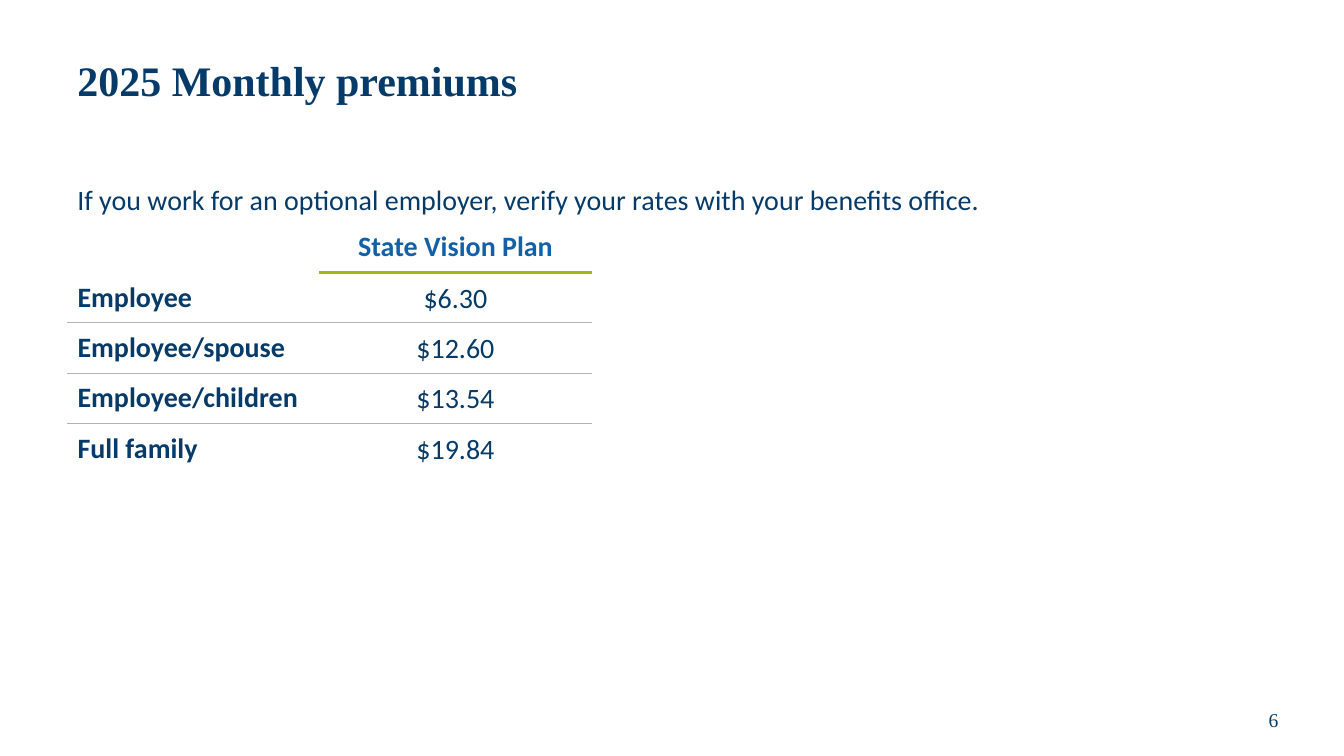
from lxml import etree
from pptx import Presentation
from pptx import util as u
from pptx.dml import color
from pptx.enum import text
from pptx.oxml import ns

NAVY, BLUE, GREEN, GRAY = "063A68", "1260A7", "A0B810", "B2B2B2"
SERIF, SANS = "Times New Roman", "Calibri"
LEFT, CENTER = text.PP_ALIGN.LEFT, text.PP_ALIGN.CENTER
TOP, MIDDLE = text.MSO_ANCHOR.TOP, text.MSO_ANCHOR.MIDDLE


def rgb(value):
    return color.RGBColor.from_string(value)


def write(frame, words, size=20, font=SANS, fill=NAVY, bold=False, align=LEFT, spacing=1.0):
    paragraph = frame.paragraphs[0]
    paragraph.alignment = align
    paragraph.line_spacing = spacing
    run = paragraph.add_run()
    run.text = words
    run.font.size = u.Pt(size)
    run.font.name = font
    run.font.bold = bold
    run.font.color.rgb = rgb(fill)


def set_border(cell, side, line):
    properties = cell._tc.get_or_add_tcPr()
    border = etree.SubElement(properties, ns.qn(f"a:ln{side}"))
    if line is None:
        etree.SubElement(border, ns.qn("a:noFill"))
        return
    shade, width = line
    border.set("w", str(u.Pt(width)))
    solid = etree.SubElement(border, ns.qn("a:solidFill"))
    etree.SubElement(solid, ns.qn("a:srgbClr")).set("val", shade)


class PremiumSlide:
    margin = 1.7
    content_width = 30.48
    row_height = 1.27
    column_widths = (6.35, 6.86)
    header_line = (GREEN, 2.25)
    row_line = (GRAY, 0.5)

    def __init__(self, presentation):
        self.slide = presentation.slides.add_slide(presentation.slide_layouts[6])

    def add_text(self, words, left, top, width, height, anchor=TOP, **style):
        box = self.slide.shapes.add_textbox(u.Cm(left), u.Cm(top), u.Cm(width), u.Cm(height))
        box.text_frame.word_wrap = True
        box.text_frame.vertical_anchor = anchor
        write(box.text_frame, words, **style)

    def line_below(self, row, column, last_row):
        if row == last_row or (row == 0 and column == 0):
            return None
        return self.header_line if row == 0 else self.row_line

    def add_rates(self, heading, rates, top):
        rows = [("", heading), *rates]
        frame = self.slide.shapes.add_table(
            len(rows), 2, u.Cm(self.margin), u.Cm(top),
            u.Cm(sum(self.column_widths)), u.Cm(self.row_height * len(rows)))
        table = frame.table
        table.first_row = False
        table.horz_banding = False
        for column, width in zip(table.columns, self.column_widths):
            column.width = u.Cm(width)
        for row, values in enumerate(rows):
            table.rows[row].height = u.Cm(self.row_height)
            for column, value in enumerate(values):
                self.fill_cell(table.cell(row, column), value, row, column, len(rows) - 1)

    def fill_cell(self, cell, value, row, column, last_row):
        cell.vertical_anchor = MIDDLE
        above = self.line_below(row - 1, column, last_row) if row else None
        below = self.line_below(row, column, last_row)
        for side, line in zip("LRTB", (None, None, above, below)):
            set_border(cell, side, line)
        cell.fill.background()
        if value:
            is_rate = row > 0 and column == 1
            write(cell.text_frame, value, bold=not is_rate,
                  fill=NAVY if row else BLUE,
                  align=CENTER if column else LEFT,
                  spacing=1.07 if is_rate else 1.0)


def main():
    presentation = Presentation()
    presentation.slide_width = u.Cm(33.87)
    presentation.slide_height = u.Cm(19.05)
    premiums = PremiumSlide(presentation)
    premiums.add_text("6", 30.61, 17.5, 2.97, 1.27, MIDDLE, size=14, font=SERIF, align=CENTER)
    premiums.add_text("2025 Monthly premiums", premiums.margin, 0.64, premiums.content_width, 2.92,
                      MIDDLE, size=30, font=SERIF, bold=True, spacing=0.9)
    premiums.add_text(
        "If you work for an optional employer, verify your rates with your benefits office.",
        premiums.margin, 4.47, premiums.content_width, 1.12)
    premiums.add_rates("State Vision Plan", [
        ("Employee", "$6.30"),
        ("Employee/spouse", "$12.60"),
        ("Employee/children", "$13.54"),
        ("Full family", "$19.84"),
    ], top=5.59)
    presentation.save("out.pptx")


if __name__ == "__main__":
    main()
